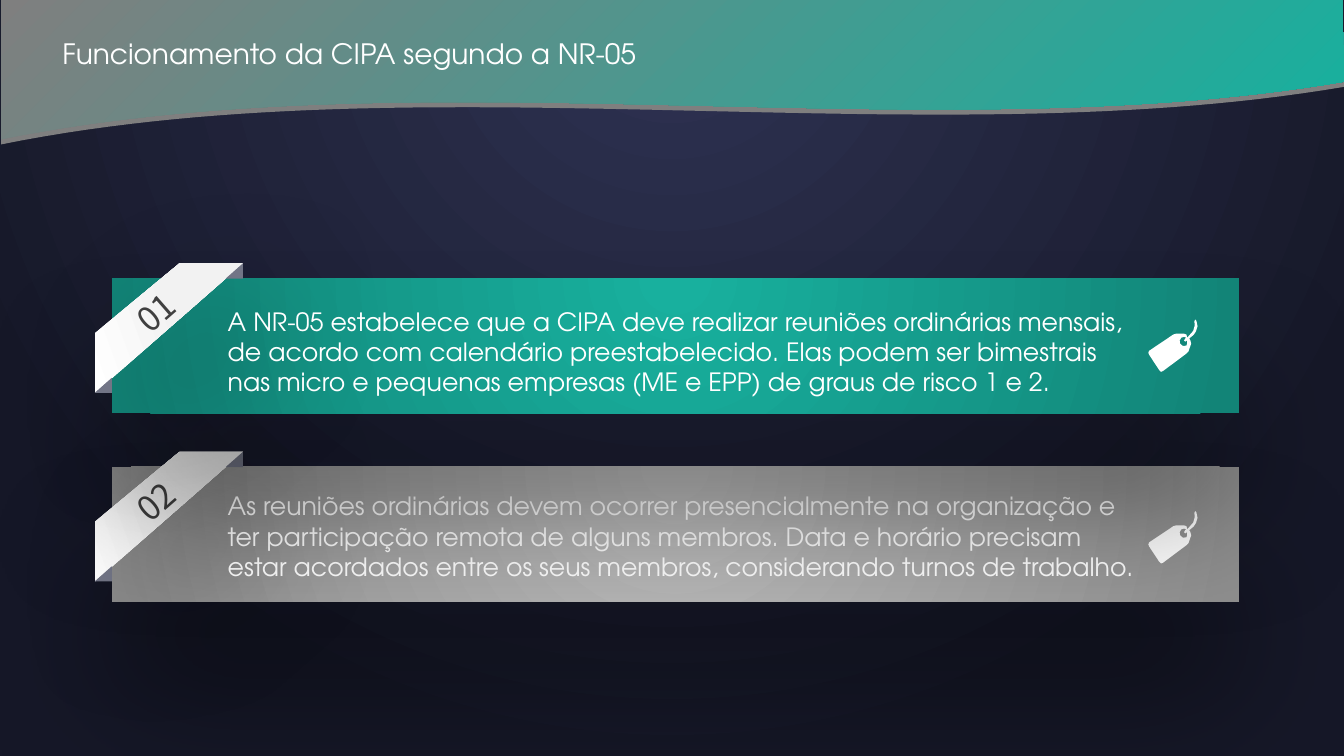
from lxml import etree
from pptx import Presentation
from pptx.dml.color import RGBColor
from pptx.enum.shapes import MSO_SHAPE
from pptx.enum.text import MSO_ANCHOR, MSO_AUTO_SIZE, PP_ALIGN
from pptx.oxml.ns import qn
from pptx.util import Cm, Pt

RECTANGLE = MSO_SHAPE.RECTANGLE
RIGHT_TRIANGLE = MSO_SHAPE.RIGHT_TRIANGLE
TOP, MIDDLE = MSO_ANCHOR.TOP, MSO_ANCHOR.MIDDLE
LEFT, CENTER = PP_ALIGN.LEFT, PP_ALIGN.CENTER
NO_AUTOFIT = MSO_AUTO_SIZE.NONE

WHITE = RGBColor(0xFF, 0xFF, 0xFF)
PALE = RGBColor(0xF2, 0xF2, 0xF2)
SILVER = RGBColor(0xBF, 0xBF, 0xBF)
STONE = RGBColor(0x8F, 0x8F, 0x8F)
GRAY = RGBColor(0x7F, 0x7F, 0x7F)
FOLD = RGBColor(0x72, 0x75, 0x86)
CHARCOAL = RGBColor(0x40, 0x40, 0x40)
TEAL = RGBColor(0x18, 0xB0, 0x9E)
DARK_TEAL = RGBColor(0x12, 0x84, 0x77)
INDIGO = RGBColor(0x2E, 0x32, 0x52)
NIGHT = RGBColor(0x16, 0x18, 0x28)
BLACK = RGBColor(0, 0, 0)

BODY_FONT = "TeX Gyre Adventor"
NUMBER_FONT = "Noto Sans CJK SC"

BAR_LEFT, BAR_WIDTH, BAR_HEIGHT = 2.82, 28.4, 3.4
FIRST_BAR_TOP, BAR_PITCH = 7.01, 4.75
RIBBON = [(-0.43, 2.9), (-0.42, 1.38), (1.7, -0.37), (3.3, -0.37)]
FOLDS = [(-0.43, 2.51), (2.87, -0.37)]
TAG_LEFT = 26.11
TAG_OUTLINE = [
    (1.22, 0.03), (1.19, 0), (1.17, 0.05), (1.18, 0.15), (1.14, 0.29),
    (0.99, 0.46), (0.97, 0.38), (0.91, 0.36), (0.71, 0.36), (0.64, 0.38),
    (0.03, 0.79), (0.01, 0.84), (0.03, 0.89), (0.28, 1.27), (0.33, 1.32),
    (0.38, 1.3), (0.97, 0.86), (1.02, 0.81), (1.09, 0.61), (1.07, 0.53),
    (1.04, 0.48), (1.15, 0.39), (1.21, 0.3), (1.25, 0.17),
]
TAG_HOLE = [
    (0.97, 0.66), (0.88, 0.67), (0.81, 0.61), (0.8, 0.53), (0.84, 0.46),
    (0.91, 0.44), (0.97, 0.46), (0.94, 0.48), (0.91, 0.53), (0.94, 0.56),
    (0.99, 0.53), (0.99, 0.6),
]
WAVE = [(33.87, 2.06), (23.27, 3.86), (10.74, 1.35), (0.03, 3.51)]
WAVE_STEPS = 60

ITEMS = [
    dict(number="01", colors=(TEAL, DARK_TEAL), text_top=0.58, text_width=23.29, tag_top=1.04,
         text="A NR-05 estabelece que a CIPA deve realizar reuniões ordinárias mensais, "
              "de acordo com calendário preestabelecido. Elas podem ser bimestrais nas micro "
              "e pequenas empresas (ME e EPP) de graus de risco 1 e 2."),
    dict(number="02", colors=(SILVER, STONE), text_top=0.48, text_width=23.6, tag_top=1.12,
         text="As reuniões ordinárias devem ocorrer presencialmente na organização e ter "
              "participação remota de alguns membros. Data e horário precisam estar acordados "
              "entre os seus membros, considerando turnos de trabalho."),
]


def shifted(points, left, top):
    return [(left + x, top + y) for x, y in points]


def bezier(points, steps):
    curve = []
    for step in range(steps + 1):
        t = step / steps
        weights = ((1 - t) ** 3, 3 * t * (1 - t) ** 2, 3 * t * t * (1 - t), t ** 3)
        curve.append(tuple(sum(w * p[axis] for w, p in zip(weights, points)) for axis in (0, 1)))
    return curve


class SlideBuilder:
    def __init__(self, slide):
        self.slide = slide
        self.shapes = slide.shapes

    def gradient(self, owner, fill, stops, angle=None):
        fill.gradient()
        element = next(owner.element.iter(qn("a:gradFill")))
        for child in list(element):
            element.remove(child)
        stop_list = etree.SubElement(element, qn("a:gsLst"))
        for position, color in stops:
            stop = etree.SubElement(stop_list, qn("a:gs"), pos=str(position * 1000))
            etree.SubElement(stop, qn("a:srgbClr"), val=str(color))
        if angle is None:
            radial = etree.SubElement(element, qn("a:path"), path="circle")
            etree.SubElement(radial, qn("a:fillToRect"),
                             l="50000", t="-80000", r="50000", b="180000")
        else:
            etree.SubElement(element, qn("a:lin"), ang=str(angle * 60000), scaled="0")

    def paint(self, shape, color=None, stops=None, angle=None, shadow=None):
        shape.line.fill.background()
        shape.shadow.inherit = False
        if stops:
            self.gradient(shape, shape.fill, stops, angle)
        else:
            shape.fill.solid()
            shape.fill.fore_color.rgb = color
        if shadow:
            distance, direction = shadow
            effects = shape.element.spPr.find(qn("a:effectLst"))
            outer = etree.SubElement(effects, qn("a:outerShdw"), blurRad=str(Pt(100)),
                                     dist=str(Pt(distance)), dir=str(direction * 60000),
                                     algn="ctr", rotWithShape="0")
            tone = etree.SubElement(outer, qn("a:srgbClr"), val=str(BLACK))
            etree.SubElement(tone, qn("a:alpha"), val="40000")

    def preset(self, kind, left, top, width, height, **style):
        shape = self.shapes.add_shape(kind, Cm(left), Cm(top), Cm(width), Cm(height))
        self.paint(shape, **style)
        return shape

    def outline(self, *contours, **style):
        contours = [[(Cm(x), Cm(y)) for x, y in contour] for contour in contours]
        builder = self.shapes.build_freeform(*contours[0][0])
        builder.add_line_segments(contours[0][1:], close=True)
        for contour in contours[1:]:
            builder.move_to(*contour[0])
            builder.add_line_segments(contour[1:], close=True)
        self.paint(builder.convert_to_shape(), **style)

    def fill_text(self, shape, text, size, font=BODY_FONT, color=WHITE,
                  align=LEFT, anchor=TOP, spacing=1.0):
        frame = shape.text_frame
        frame.text = text
        frame.word_wrap = True
        frame.auto_size = NO_AUTOFIT
        frame.vertical_anchor = anchor
        paragraph = frame.paragraphs[0]
        paragraph.alignment = align
        paragraph.line_spacing = spacing
        run_font = paragraph.runs[0].font
        run_font.name = font
        run_font.size = Pt(size)
        run_font.color.rgb = color

    def text(self, text, left, top, width, height, size, rotation=0, **style):
        shape = self.shapes.add_textbox(Cm(left), Cm(top), Cm(width), Cm(height))
        shape.rotation = rotation
        self.fill_text(shape, text, size, **style)

    def title(self, text, left, top, width, height):
        title = self.shapes.title
        title.left, title.top, title.width, title.height = Cm(left), Cm(top), Cm(width), Cm(height)
        self.fill_text(title, text, 20, spacing=1.5)
        self.shapes.element.append(title.element)

    def item(self, top, number, colors, text, text_top, text_width, tag_top):
        self.preset(RECTANGLE, BAR_LEFT, top, BAR_WIDTH, BAR_HEIGHT,
                    stops=[(2, colors[0]), (100, colors[1])], shadow=(71, 90))
        self.outline(shifted(RIBBON, BAR_LEFT, top),
                     stops=[(0, WHITE), (58, PALE), (100, PALE)], angle=340, shadow=(46, 45))
        for x, y in shifted(FOLDS, BAR_LEFT, top):
            fold = self.preset(RIGHT_TRIANGLE, x, y, 0.43, 0.38, color=FOLD)
            fold.element.spPr.xfrm.set("flipH", "1")
        self.text(number, BAR_LEFT - 0.86, top + 0.23, 3.94, 1.27, 24, rotation=318.8,
                  font=NUMBER_FONT, color=CHARCOAL, align=CENTER, anchor=MIDDLE)
        self.text(text, BAR_LEFT + 2.67, top + text_top, text_width, 2.57, 18)
        tag = (BAR_LEFT + TAG_LEFT, top + tag_top)
        self.outline(shifted(TAG_OUTLINE, *tag), shifted(TAG_HOLE, *tag), color=WHITE)

    def banner(self, top, **style):
        corners = [(0.03, 0), (33.83, 0)]
        self.outline(shifted(bezier(WAVE, WAVE_STEPS) + corners, 0, top), **style)


def main():
    presentation = Presentation()
    presentation.slide_width, presentation.slide_height = Cm(33.87), Cm(19.05)
    slide = presentation.slides.add_slide(presentation.slide_layouts[5])
    builder = SlideBuilder(slide)
    builder.gradient(slide, slide.background.fill, [(2, INDIGO), (100, NIGHT)])
    for index, item in reversed(list(enumerate(ITEMS))):
        builder.item(FIRST_BAR_TOP + index * BAR_PITCH, **item)
    builder.banner(0.13, color=GRAY)
    builder.banner(0, stops=[(0, GRAY), (98, TEAL)], angle=45)
    builder.title("Funcionamento da CIPA segundo a NR-05", 1.32, 0.38, 30.3, 1.37)
    presentation.save("out.pptx")


if __name__ == "__main__":
    main()
